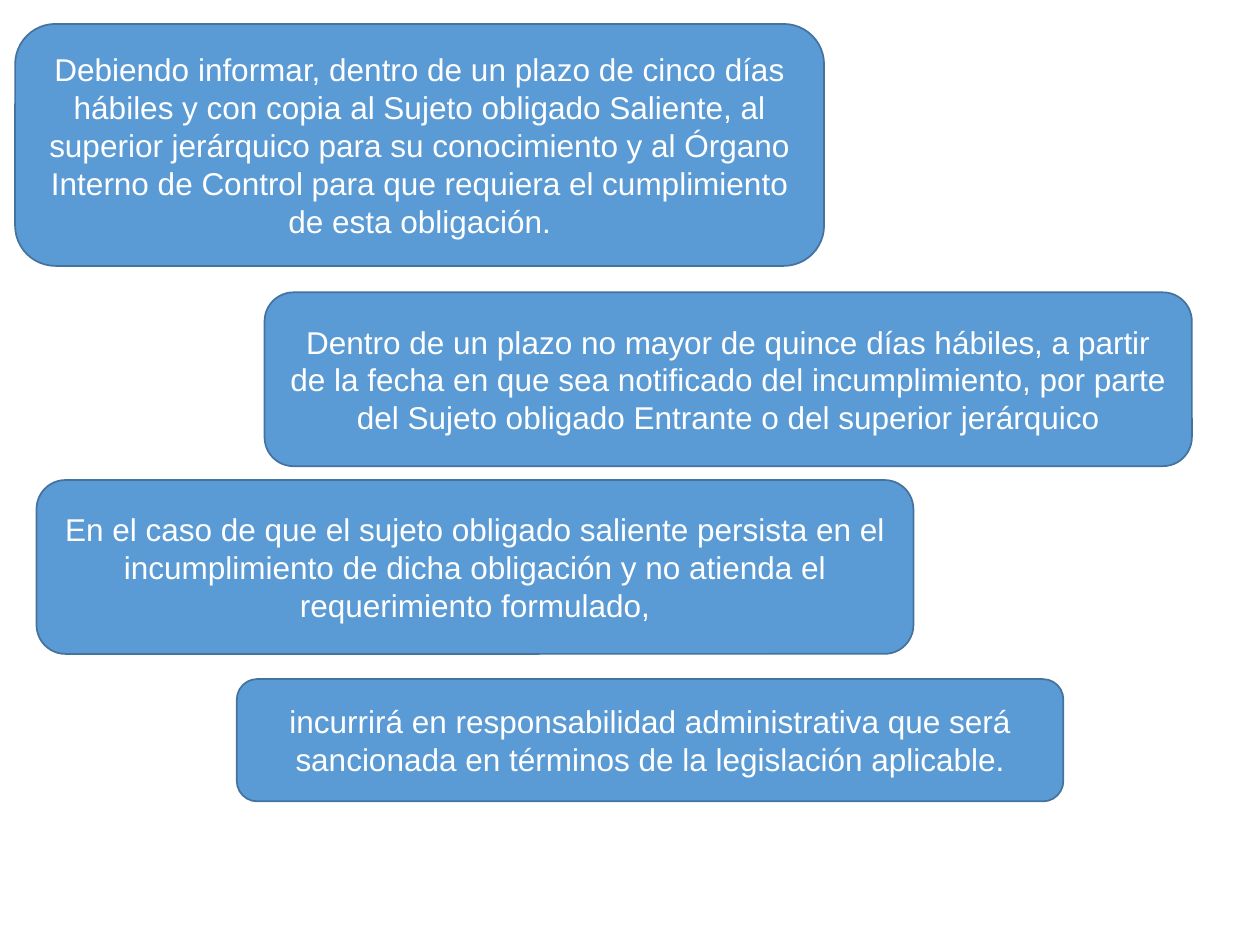
from pptx import Presentation
from pptx.dml.color import RGBColor
from pptx.enum.shapes import MSO_SHAPE
from pptx.enum.text import MSO_ANCHOR, PP_ALIGN
from pptx.util import Inches, Pt

BLUE = RGBColor(0x5B, 0x9B, 0xD5)
EDGE = RGBColor(0x43, 0x73, 0x9E)
WHITE = RGBColor(0xFF, 0xFF, 0xFF)

# Left, top, width, height in inches, then the wording
STEPS = [
    (0.12, 0.19, 6.42, 1.92,
     "Debiendo informar, dentro de un plazo de cinco días hábiles y con copia "
     "al Sujeto obligado Saliente, al superior jerárquico para su conocimiento "
     "y al Órgano Interno de Control para que requiera el cumplimiento de esta "
     "obligación."),
    (0.29, 3.81, 6.96, 1.38,
     "En el caso de que el sujeto obligado saliente persista en el "
     "incumplimiento de dicha obligación y no atienda el requerimiento "
     "formulado,"),
    (2.1, 2.32, 7.36, 1.38,
     "Dentro de un plazo no mayor de quince días hábiles, a partir de la fecha "
     "en que sea notificado del incumplimiento, por parte del Sujeto obligado "
     "Entrante o del superior jerárquico"),
    (1.88, 5.39, 6.56, 0.97,
     "incurrirá en responsabilidad administrativa que será sancionada en "
     "términos de la legislación aplicable."),
]


def add_step(slide, left, top, width, height, text):
    box = slide.shapes.add_shape(
        MSO_SHAPE.ROUNDED_RECTANGLE,
        Inches(left), Inches(top), Inches(width), Inches(height))
    box.shadow.inherit = False
    box.fill.solid()
    box.fill.fore_color.rgb = BLUE
    box.line.color.rgb = EDGE
    box.line.width = Pt(1)

    frame = box.text_frame
    frame.word_wrap = True
    frame.vertical_anchor = MSO_ANCHOR.MIDDLE
    para = frame.paragraphs[0]
    para.alignment = PP_ALIGN.CENTER
    run = para.add_run()
    run.text = text
    run.font.name = "Arial"
    run.font.size = Pt(18)
    run.font.color.rgb = WHITE


def main():
    deck = Presentation()
    deck.slide_width = Inches(10)
    deck.slide_height = Inches(7.5)
    slide = deck.slides.add_slide(deck.slide_layouts[6])
    for step in STEPS:
        add_step(slide, *step)
    deck.save("out.pptx")


if __name__ == "__main__":
    main()
